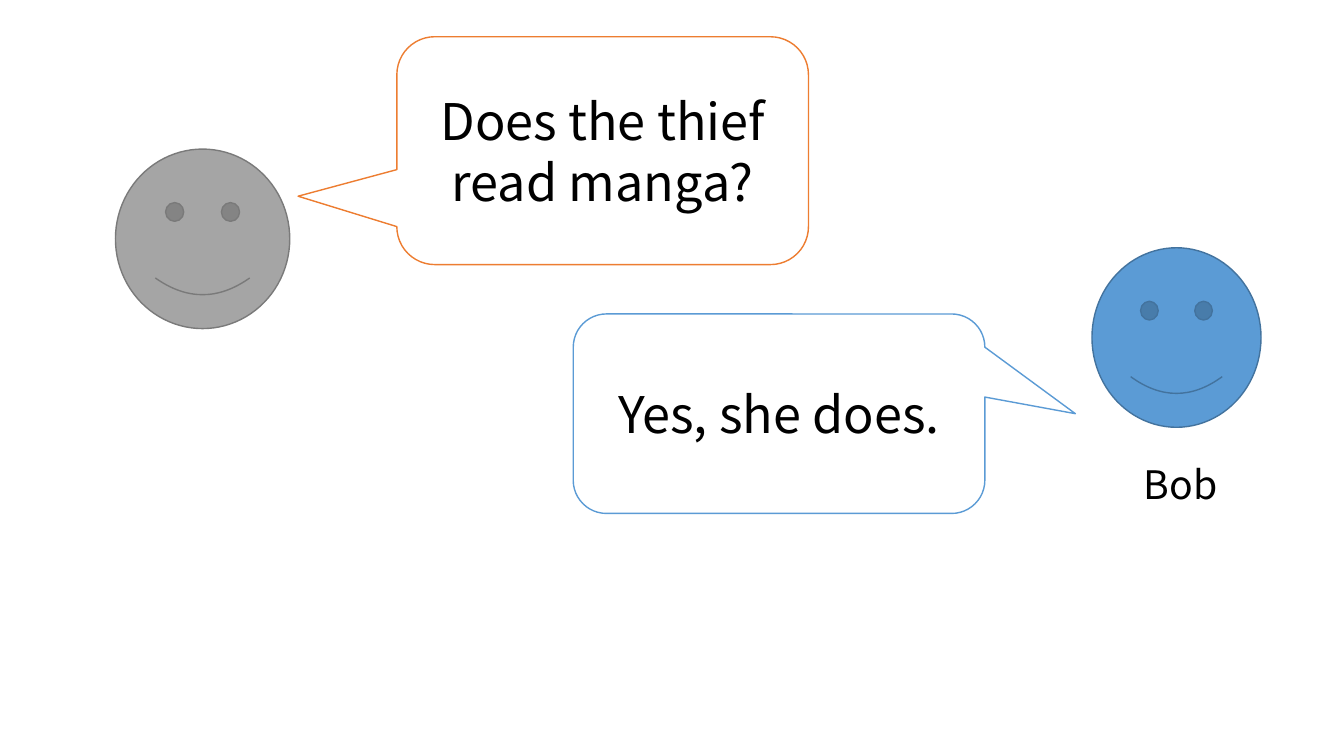
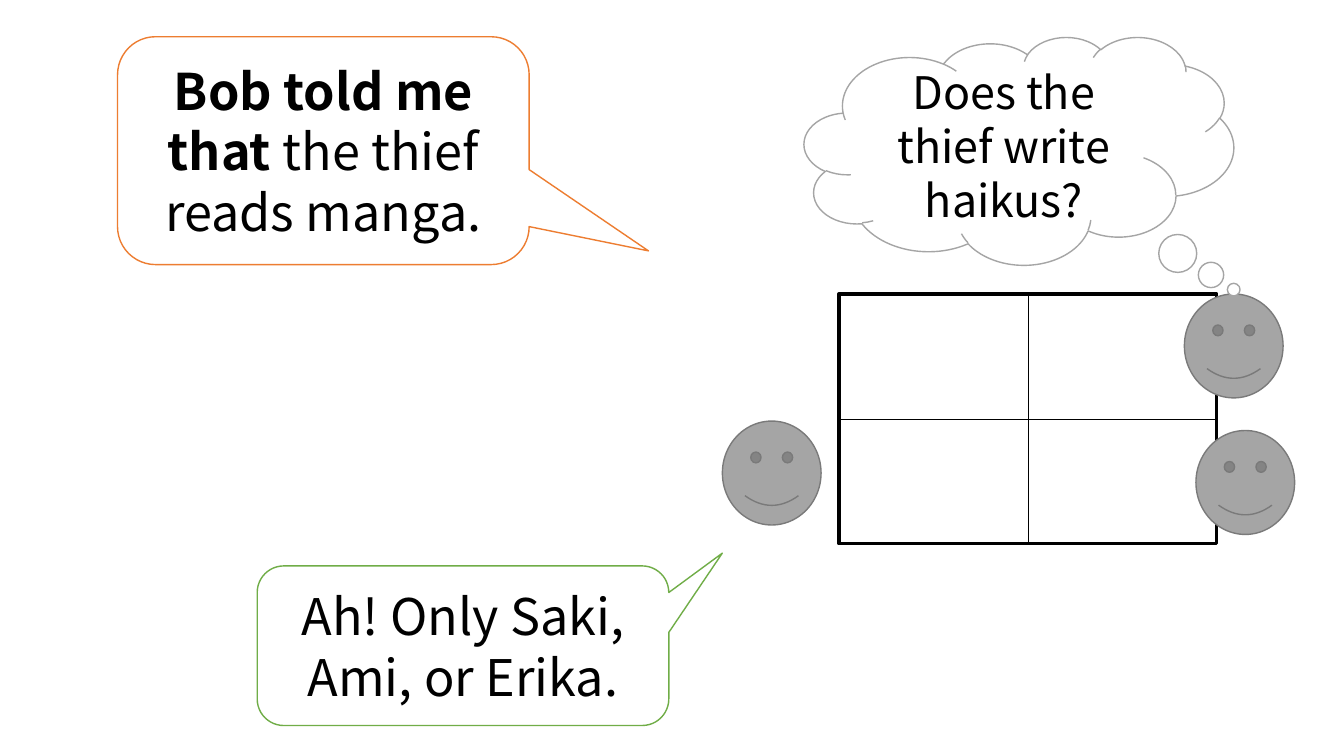
from lxml.etree import SubElement
from pptx import Presentation
from pptx.dml.color import RGBColor
from pptx.enum.shapes import MSO_CONNECTOR, MSO_SHAPE
from pptx.enum.text import MSO_ANCHOR, PP_ALIGN
from pptx.oxml.ns import qn
from pptx.util import Pt

PX = 9525
FONT = "Noto Sans CJK JP"
COLORS = {
    "white": "FFFFFF",
    "black": "000000",
    "blue": "5B9BD5",
    "blue_edge": "43739E",
    "gray": "A5A5A5",
    "gray_edge": "7A7A7A",
    "orange": "ED7D31",
    "green": "70AD47",
}


def rgb(name):
    """Return the palette colour called name."""
    return RGBColor.from_string(COLORS[name])


def add_text(p, text, size=36, bold=False, color="black"):
    """Append a formatted run to a paragraph."""
    r = p.add_run()
    r.text = text
    r.font.name = FONT
    r.font.size = Pt(size)
    r.font.bold = bold
    r.font.color.rgb = rgb(color)


class Deck:
    """Hold the presentation, its style and the current slide."""

    def __init__(self, width, height):
        """Start an empty presentation of the given size."""
        self.prs = Presentation()
        self.prs.slide_width = width * PX
        self.prs.slide_height = height * PX
        self.s = None

    def new_slide(self):
        """Add a blank slide and make it current."""
        self.s = self.prs.slides.add_slide(self.prs.slide_layouts[6])

    def shape(self, kind, x, y, w, h, fill="white", line="black", weight=1):
        """Draw a flat preset shape."""
        sp = self.s.shapes.add_shape(kind, x * PX, y * PX, w * PX, h * PX)
        sp.shadow.inherit = False
        sp.fill.solid()
        sp.fill.fore_color.rgb = rgb(fill)
        sp.line.color.rgb = rgb(line)
        sp.line.width = Pt(weight)
        return sp

    def face(self, x, y, w=94, h=99, color="gray"):
        """Draw a smiling face with a darker edge."""
        self.shape(MSO_SHAPE.SMILEY_FACE, x, y, w, h, color, color + "_edge")

    def bubble(self, x, y, w, h, tail, line, runs, size=36,
               kind=MSO_SHAPE.ROUNDED_RECTANGULAR_CALLOUT):
        """Draw a callout whose tail is an offset in shares of its size."""
        sp = self.shape(kind, x, y, w, h, line=line)
        for i, offset in enumerate(tail):
            sp.adjustments[i] = offset
        tf = sp.text_frame
        tf.word_wrap = True
        tf.vertical_anchor = MSO_ANCHOR.MIDDLE
        p = tf.paragraphs[0]
        p.alignment = PP_ALIGN.CENTER
        for text, bold in runs:
            add_text(p, text, size=size, bold=bold)

    def label(self, x, y, w, h, text, size=28):
        """Place a left-aligned caption."""
        sp = self.s.shapes.add_textbox(x * PX, y * PX, w * PX, h * PX)
        tf = sp.text_frame
        tf.word_wrap = True
        add_text(tf.paragraphs[0], text, size=size)

    def join(self, sp, start, end, weight=0.5):
        """Connect the middles of two sides of one shape."""
        line = self.s.shapes.add_connector(MSO_CONNECTOR.STRAIGHT, 0, 0, 0, 0)
        line.begin_connect(sp, start)
        line.end_connect(sp, end)
        line.line.color.rgb = rgb("black")
        line.line.width = Pt(weight)
        SubElement(line._element.spPr, qn("a:effectLst"))

    def table_top(self, x, y, w, h):
        """Draw a table top split into four quarters."""
        sp = self.shape(MSO_SHAPE.RECTANGLE, x, y, w, h, weight=2.25)
        self.join(sp, 0, 2)
        self.join(sp, 1, 3)


def build_question(deck):
    """Build the slide with the question and Bob's answer."""
    deck.new_slide()
    deck.face(1040, 236, 161, 171, "blue")
    deck.face(110, 142, 166, 171)
    deck.bubble(378, 35, 392, 217, (-0.74, 0.2), "orange",
                [("Does the thief read manga?", False)])
    deck.bubble(546, 299, 392, 190, (0.72, 0), "blue",
                [("Yes, she does.", False)])
    deck.label(1080, 434, 161, 55, "Bob")


def build_report(deck):
    """Build the slide where the group shares what it learned."""
    deck.new_slide()
    deck.table_top(799, 280, 360, 238)
    for x, y in ((688, 401), (1139, 410), (1128, 280)):
        deck.face(x, y)
    deck.bubble(112, 35, 392, 217, (0.79, 0.44), "orange",
                [("Bob told me that ", True), ("the thief reads manga.", False)])
    deck.bubble(245, 539, 392, 152, (0.63, -0.58), "green",
                [("Ah! Only Saki, Ami, or Erika.", False)])
    deck.bubble(766, 35, 409, 217, (0.5, 0.61), "gray",
                [("Does the thief write haikus?", False)], size=32,
                kind=MSO_SHAPE.CLOUD_CALLOUT)


def main():
    """Build and save both slides."""
    deck = Deck(1280, 720)
    build_question(deck)
    build_report(deck)
    deck.prs.save("out.pptx")


if __name__ == "__main__":
    main()
